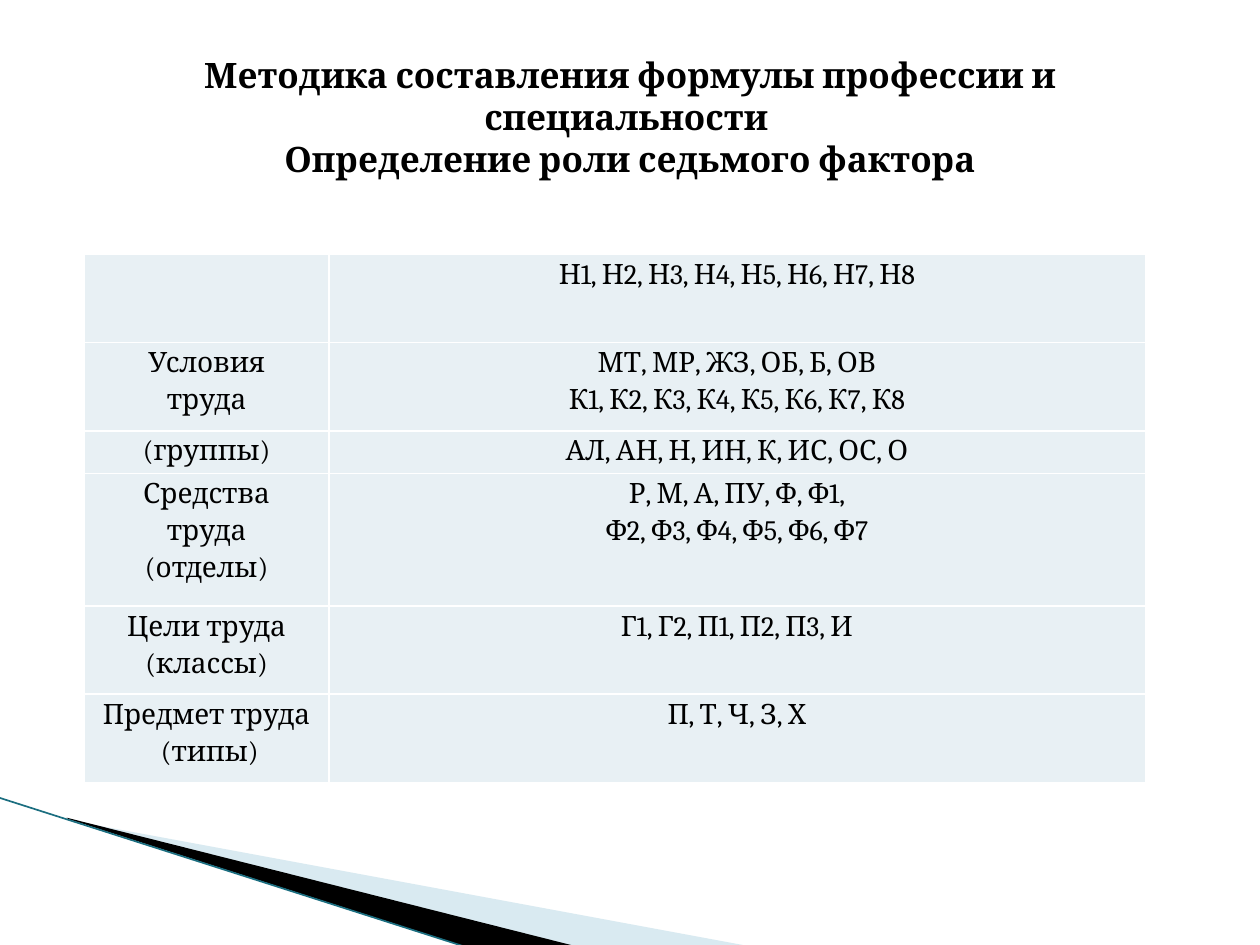
from lxml import etree
from pptx import Presentation
from pptx.dml.color import RGBColor
from pptx.enum.shapes import MSO_CONNECTOR
from pptx.enum.text import MSO_ANCHOR, MSO_AUTO_SIZE, PP_ALIGN
from pptx.oxml.ns import qn
from pptx.util import Inches, Pt

CENTER = PP_ALIGN.CENTER
MIDDLE = MSO_ANCHOR.MIDDLE
TOP = MSO_ANCHOR.TOP
NO_AUTOFIT = MSO_AUTO_SIZE.NONE
STRAIGHT = MSO_CONNECTOR.STRAIGHT

FONT = "Cambria"
BLACK = "000000"
WHITE = "FFFFFF"
CELL_FILL = "E8F0F4"
PALE_BLUE = "A0CBDC"
TEAL = "1B6E80"

TITLE = ("Методика составления формулы профессии и специальности \v"
         "Определение роли седьмого фактора")
FACTORS = [
    (0.7, "", "Н1, Н2, Н3, Н4, Н5, Н6, Н7, Н8"),
    (0.7, "Условия\nтруда", "МТ, МР, ЖЗ, ОБ, Б, ОВ\nК1, К2, К3, К4, К5, К6, К7, К8"),
    (0.34, "(группы)", "АЛ, АН, Н, ИН, К, ИС, ОС, О"),
    (1.05, "Средства\nтруда\n(отделы)", "Р, М, А, ПУ, Ф, Ф1,\nФ2, Ф3, Ф4, Ф5, Ф6, Ф7"),
    (0.7, "Цели труда\n(классы)", "Г1, Г2, П1, П2, П3, И"),
    (0.7, "Предмет труда (типы)", "П, Т, Ч, З, Х"),
]
COLUMN_WIDTHS = [1.94, 6.48]


def color(hex_value):
    return RGBColor.from_string(hex_value)


def set_attributes(target, values):
    for name, value in values.items():
        setattr(target, name, value)


def format_font(font, size, bold):
    set_attributes(font, {"name": FONT, "size": Pt(size), "bold": bold})
    font.color.rgb = color(BLACK)


def add_wedge(slide, points, fill, opacity=None):
    corners = [(Inches(x), Inches(y)) for x, y in points]
    builder = slide.shapes.build_freeform(*corners[0])
    builder.add_line_segments(corners[1:], close=True)
    wedge = builder.convert_to_shape()
    wedge.shadow.inherit = False
    wedge.fill.solid()
    wedge.fill.fore_color.rgb = color(fill)
    wedge.line.fill.background()
    if opacity is not None:
        solid = wedge._element.spPr.find(qn("a:solidFill"))
        etree.SubElement(solid[0], qn("a:alpha"), val=str(opacity * 1000))


def add_corner_decoration(slide, left, top):
    def shifted(offsets):
        return [(left + x, top + y) for x, y in offsets]

    add_wedge(slide, shifted([(0.56, 0.18), (5.96, 1.18), (4.57, 1.18), (0.56, 0.17)]),
              PALE_BLUE, 40)
    add_wedge(slide, shifted([(0.54, 0.16), (4.58, 1.18), (3.73, 1.19), (0.55, 0.17)]),
              BLACK)
    edge = slide.shapes.add_connector(
        STRAIGHT, Inches(left), Inches(top), Inches(left + 3.72), Inches(top + 1.19))
    edge.line.color.rgb = color(TEAL)
    edge.line.width = Pt(0.95)
    etree.SubElement(edge._element.spPr, qn("a:effectLst"))


def add_title(slide, left, top, width, height):
    title = slide.shapes.title
    set_attributes(title, {"left": Inches(left), "top": Inches(top),
                           "width": Inches(width), "height": Inches(height)})
    frame = title.text_frame
    set_attributes(frame, {"word_wrap": True, "auto_size": NO_AUTOFIT,
                           "vertical_anchor": MIDDLE})
    heading = frame.paragraphs[0]
    heading.text = TITLE
    heading.alignment = CENTER
    for run in heading.runs:
        format_font(run.font, 20, True)


def set_borders(cell):
    properties = cell._tc.get_or_add_tcPr()
    for position, side in enumerate(("lnL", "lnR", "lnT", "lnB")):
        border = etree.Element(qn(f"a:{side}"), w=str(Pt(1)))
        solid = etree.SubElement(border, qn("a:solidFill"))
        etree.SubElement(solid, qn("a:srgbClr"), val=WHITE)
        properties.insert(position, border)


def fill_cell(cell, text):
    set_attributes(cell, {"text": text, "vertical_anchor": TOP,
                          "margin_left": Inches(0.05), "margin_right": Inches(0.05),
                          "margin_top": 0, "margin_bottom": 0})
    cell.fill.solid()
    cell.fill.fore_color.rgb = color(CELL_FILL)
    set_borders(cell)
    for paragraph in cell.text_frame.paragraphs:
        set_attributes(paragraph, {"alignment": CENTER, "line_spacing": 1.15})
        indent = Inches(0.05)
        paragraph._p.get_or_add_pPr().set("marL", str(indent))
        paragraph._p.get_or_add_pPr().set("indent", str(-indent))
        format_font(paragraph.font, 16, False)
        for run in paragraph.runs:
            format_font(run.font, 16, False)


def add_factor_table(slide, left, top):
    width = sum(COLUMN_WIDTHS)
    height = sum(row[0] for row in FACTORS)
    table = slide.shapes.add_table(
        len(FACTORS), len(COLUMN_WIDTHS),
        Inches(left), Inches(top), Inches(width), Inches(height)).table
    set_attributes(table, {"first_row": False, "horz_banding": False})
    for column, column_width in zip(table.columns, COLUMN_WIDTHS):
        column.width = Inches(column_width)
    for row, (row_height, *texts) in zip(table.rows, FACTORS):
        row.height = Inches(row_height)
        for cell, text in zip(row.cells, texts):
            fill_cell(cell, text)


def main():
    presentation = Presentation()
    set_attributes(presentation, {"slide_width": Inches(10), "slide_height": Inches(7.5)})
    slide = presentation.slides.add_slide(presentation.slide_layouts[5])
    add_corner_decoration(slide, -0.01, 6.33)
    add_factor_table(slide, 0.67, 2.02)
    add_title(slide, 0.5, 0.3, 9, 1.25)
    presentation.save("out.pptx")


if __name__ == "__main__":
    main()
